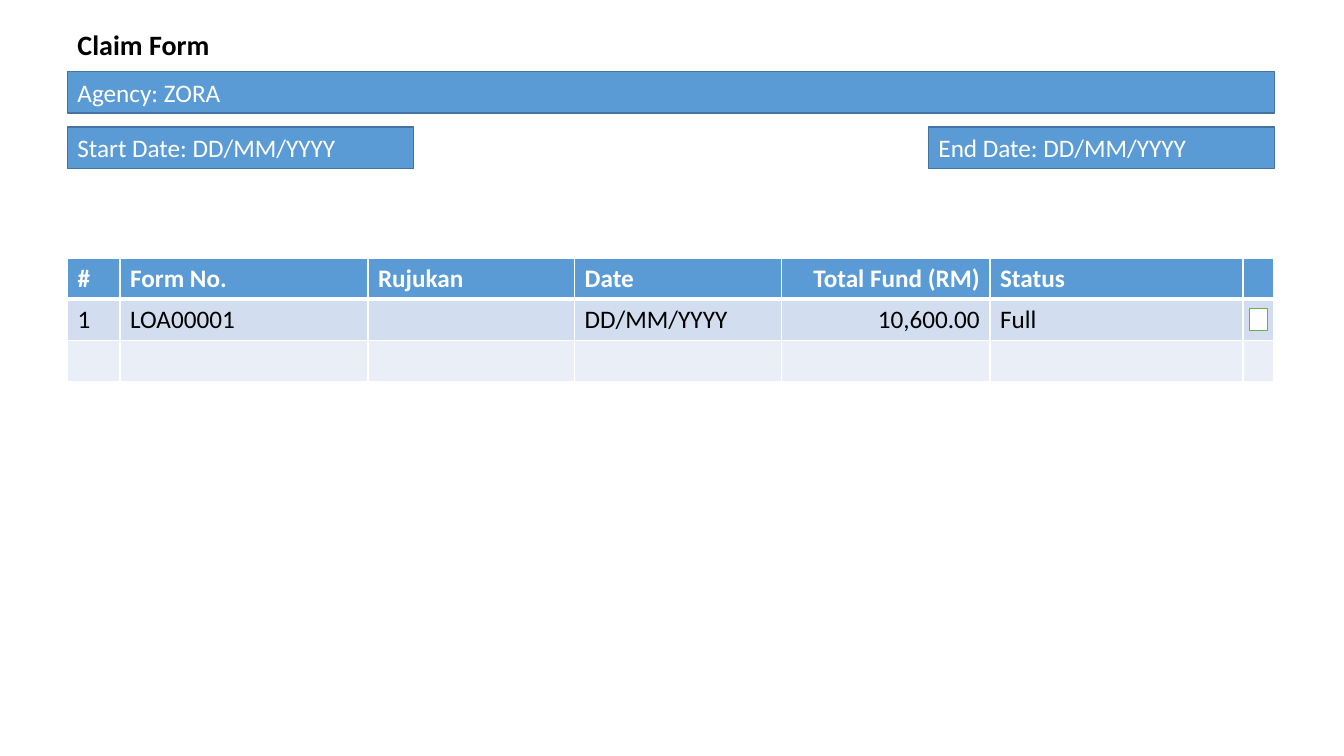
from lxml.etree import SubElement as Sub
from pptx import Presentation
from pptx.dml.color import RGBColor
from pptx.enum.shapes import MSO_SHAPE as Shape
from pptx.enum.text import MSO_ANCHOR as Anchor, PP_ALIGN as Align
from pptx.oxml.ns import qn
from pptx.util import Inches, Pt

BLUE, EDGE, GREEN = "5B9BD5", "43739E", "70AD47"
WHITE, BLACK = "FFFFFF", "000000"
BANDS = [BLUE, "D2DEEF", "EAEFF7"]
COLS = [0.52, 2.46, 2.05, 2.05, 2.07, 2.51, 0.3]
ROWS = [
    ["#", "Form No.", "Rujukan", "Date", "Total Fund (RM)", "Status", ""],
    ["1", "LOA00001", "", "DD/MM/YYYY", "10,600.00", "Full", ""],
    [""] * 7,
]
FUND = 4  # right-aligned column
LEFT, WIDTH, HIGH = 0.67, 11.97, 0.41


def paint(part, color):
    part.solid()
    part.fore_color.rgb = RGBColor.from_string(color)


def write(frame, text, size=18, color=WHITE, bold=False, align=Align.LEFT):
    par = frame.paragraphs[0]
    par.alignment = align
    par.font.size = Pt(size)
    if text:
        run = par.add_run()
        run.text = text
        font = run.font
        font.name, font.size, font.bold = "Calibri", Pt(size), bold
        font.color.rgb = RGBColor.from_string(color)


def add_box(slide, box, fill, line, text=""):
    rect = slide.shapes.add_shape(Shape.RECTANGLE, *map(Inches, box))
    rect.shadow.inherit = False
    paint(rect.fill, fill)
    paint(rect.line.fill, line)
    rect.line.width = Pt(1)
    rect.text_frame.vertical_anchor = Anchor.MIDDLE
    write(rect.text_frame, text)


def add_edges(cell, top, bottom):
    props = cell._tc.get_or_add_tcPr()
    for side, width in zip("LRTB", (1, 1, top, bottom)):
        line = Sub(props, qn(f"a:ln{side}"), w=str(Pt(width)))
        Sub(Sub(line, qn("a:solidFill")), qn("a:srgbClr"), val=WHITE)


def add_head(slide, left, top, width):
    # Title
    title = slide.shapes.add_textbox(*map(Inches, (left, top, 1.52, 0.44)))
    title.text_frame.word_wrap = False
    write(title.text_frame, "Claim Form", size=20, color=BLACK, bold=True)

    # Agency bar, with the two dates flush to its ends
    date = 3.43
    bars = [
        ("Agency: ZORA", left, 0.49, width),
        ("Start Date: DD/MM/YYYY", left, 1.04, date),
        ("End Date: DD/MM/YYYY", left + width - date, 1.04, date),
    ]
    for text, x, drop, wide in bars:
        add_box(slide, (x, top + drop, wide, HIGH), BLUE, EDGE, text)


def add_claims(slide, left, top, width):
    # Claims table
    box = (left, top, width, HIGH * len(ROWS))
    table = slide.shapes.add_table(len(ROWS), len(COLS), *map(Inches, box)).table
    for col, wide in zip(table.columns, COLS):
        col.width = Inches(wide)
    for r, texts in enumerate(ROWS):
        table.rows[r].height = Inches(HIGH)
        head = r == 0
        for c, text in enumerate(texts):
            cell = table.cell(r, c)
            add_edges(cell, 3 if r == 1 else 1, 3 if head else 1)
            paint(cell.fill, BANDS[r])
            write(cell.text_frame, text, bold=head,
                  color=WHITE if head else BLACK,
                  align=Align.RIGHT if c == FUND else Align.LEFT)

    # Tick box in the last column of the first claim
    tick = (left + width - 0.25, top + HIGH + 0.09, 0.18, 0.22)
    add_box(slide, tick, WHITE, GREEN)


def main():
    deck = Presentation()
    deck.slide_width, deck.slide_height = Inches(13.33), Inches(7.5)
    slide = deck.slides.add_slide(deck.slide_layouts[6])
    add_head(slide, LEFT, 0.22, WIDTH)
    add_claims(slide, LEFT, 2.56, WIDTH)
    deck.save("out.pptx")


if __name__ == "__main__":
    main()
